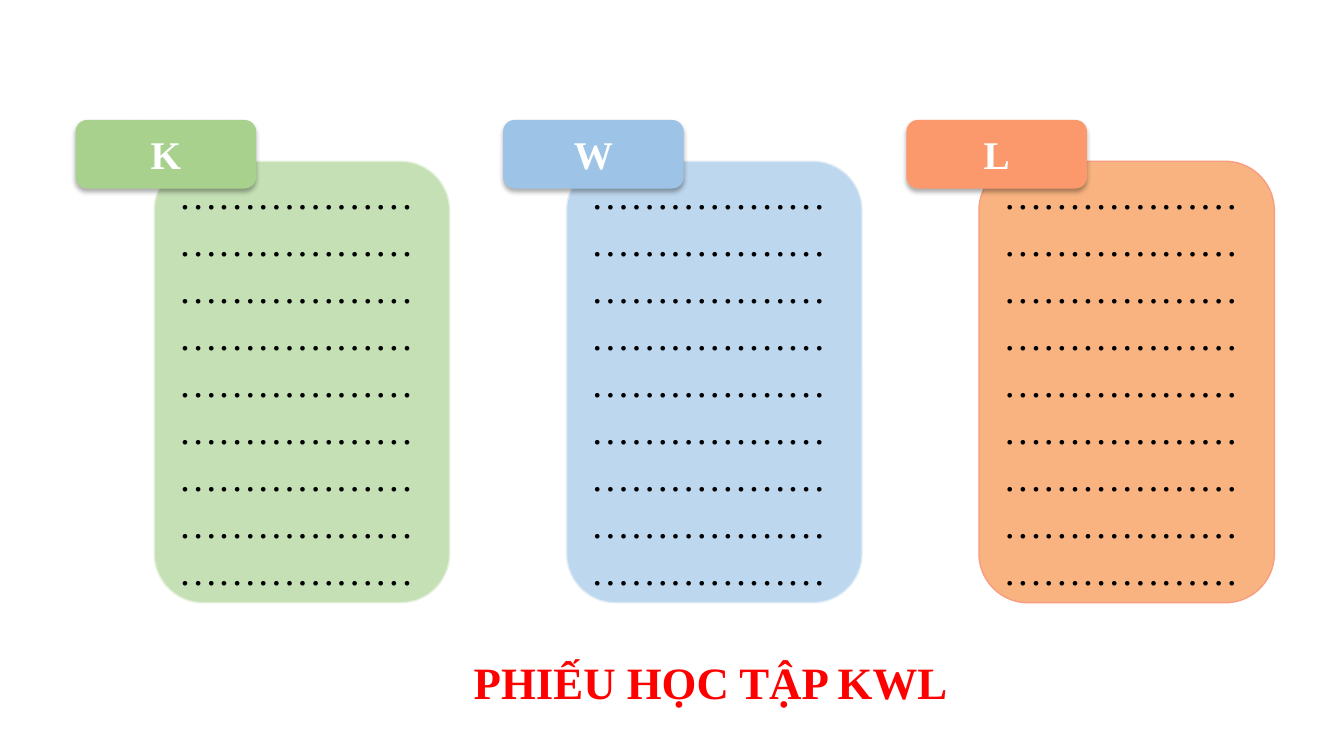
from lxml.etree import SubElement as Sub
from pptx import Presentation
from pptx.dml.color import RGBColor as Color
from pptx.enum.shapes import MSO_SHAPE as Shape
from pptx.enum.text import MSO_ANCHOR as Anchor, PP_ALIGN as Align
from pptx.oxml.ns import qn
from pptx.util import Inches, Pt

FONT = "Times New Roman"
BLACK = Color(0x00, 0x00, 0x00)
WHITE = Color(0xFF, 0xFF, 0xFF)
RED = Color(0xFF, 0x00, 0x00)
GREEN = Color(0xA9, 0xD1, 0x8E)
GREEN_MID = Color(0xC5, 0xE0, 0xB4)
GREEN_PALE = Color(0xE2, 0xF0, 0xD9)
BLUE = Color(0x9D, 0xC3, 0xE6)
BLUE_MID = Color(0xBD, 0xD7, 0xEE)
BLUE_PALE = Color(0xDE, 0xEB, 0xF7)
CORAL = Color(0xFB, 0x99, 0x6D)
CORAL_MID = Color(0xF8, 0xB3, 0x80)
CORAL_EDGE = Color(0xF8, 0x9D, 0x80)

ROWS, PER_ROW = 9, 6
DOTS = "…" * (ROWS * PER_ROW)
TOP, STEP = 1.19, 4.09
COLUMNS = [
    ("K", 0.75, GREEN, GREEN_MID, GREEN_PALE),
    ("W", 4.99, BLUE, BLUE_MID, BLUE_PALE),
    ("L", 8.99, CORAL, CORAL_MID, CORAL_EDGE),
]


def write(shape, text, size=28, color=BLACK, bold=False, align=Align.CENTER):
    frame = shape.text_frame
    frame.word_wrap = True
    frame.vertical_anchor = Anchor.MIDDLE
    para = frame.paragraphs[0]
    para.alignment = align
    run = para.add_run()
    run.text = text
    font = run.font
    font.name, font.size, font.bold = FONT, Pt(size), bold
    font.color.rgb = color


def block(slide, box, fill, kind=Shape.ROUNDED_RECTANGLE, edge=None):
    shape = slide.shapes.add_shape(kind, *map(Inches, box))
    shape.shadow.inherit = False
    shape.fill.solid()
    shape.fill.fore_color.rgb = fill
    if edge is None:
        shape.line.fill.background()
    else:
        shape.line.color.rgb = edge
        shape.line.width = Pt(1)
    return shape


def shade(shape):
    effects = shape.element.spPr.find(qn("a:effectLst"))
    drop = Sub(effects, qn("a:outerShdw"), blurRad=str(Pt(3.5)),
               dist=str(Pt(2.2)), dir="5400000", rotWithShape="0")
    tint = Sub(drop, qn("a:srgbClr"), val="000000")
    Sub(tint, qn("a:alpha"), val="32000")


def column(slide, left, top, tab_left, label, tab_fill, fill, edge):
    panel = block(slide, (left, top + 0.41, 2.93, 4.38), fill, edge=edge)
    write(panel, DOTS, align=Align.JUSTIFY)
    tab = block(slide, (tab_left, top, 1.79, 0.68), tab_fill)
    shade(tab)
    write(tab, label, color=WHITE, bold=True)


def title(slide, box):
    band = block(slide, box, WHITE, Shape.FLOWCHART_ALTERNATE_PROCESS)
    write(band, "PHIẾU HỌC TẬP KWL", size=32, color=RED, bold=True)


def main():
    deck = Presentation()
    deck.slide_width, deck.slide_height = Inches(13.33), Inches(7.5)
    slide = deck.slides.add_slide(deck.slide_layouts[6])
    for i, (label, tab_left, *colors) in enumerate(COLUMNS):
        column(slide, 1.53 + i * STEP, TOP, tab_left, label, *colors)
    title(slide, (2.93, 6.34, 8.24, 0.84))
    deck.save("out.pptx")


if __name__ == "__main__":
    main()
